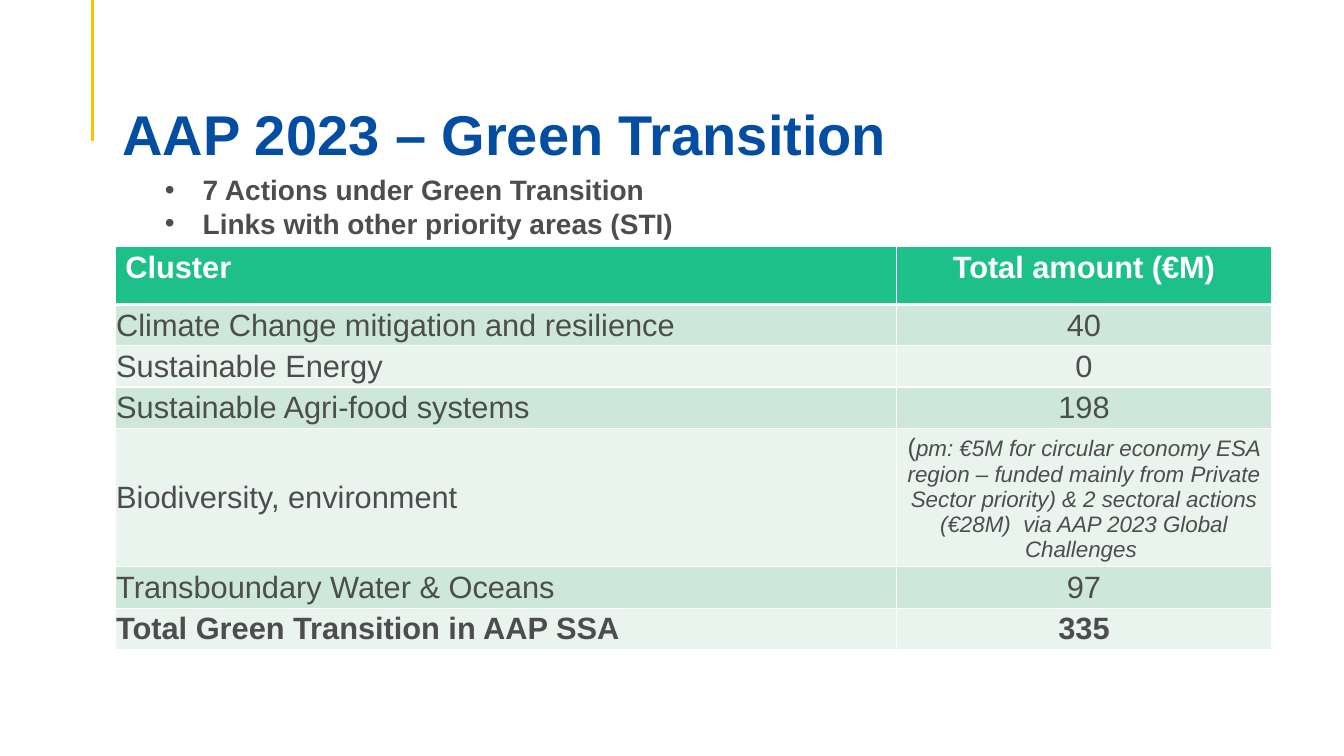
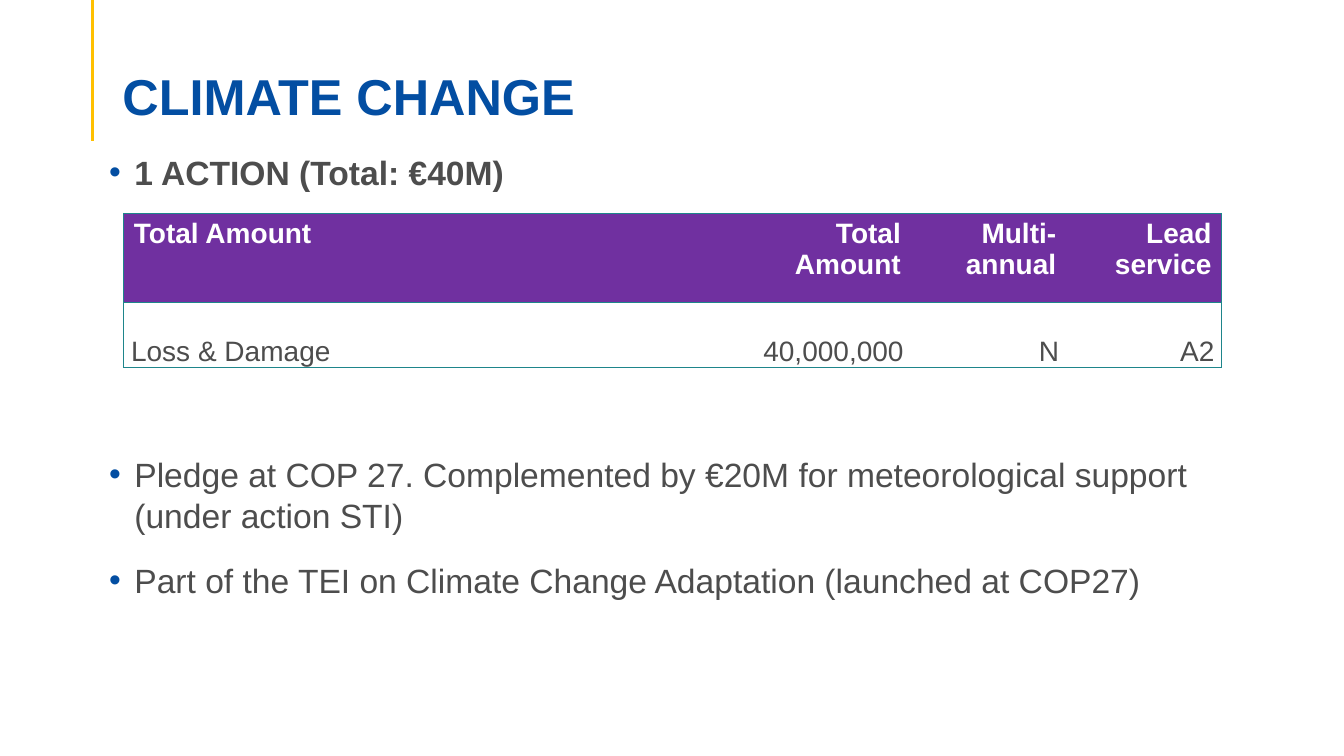
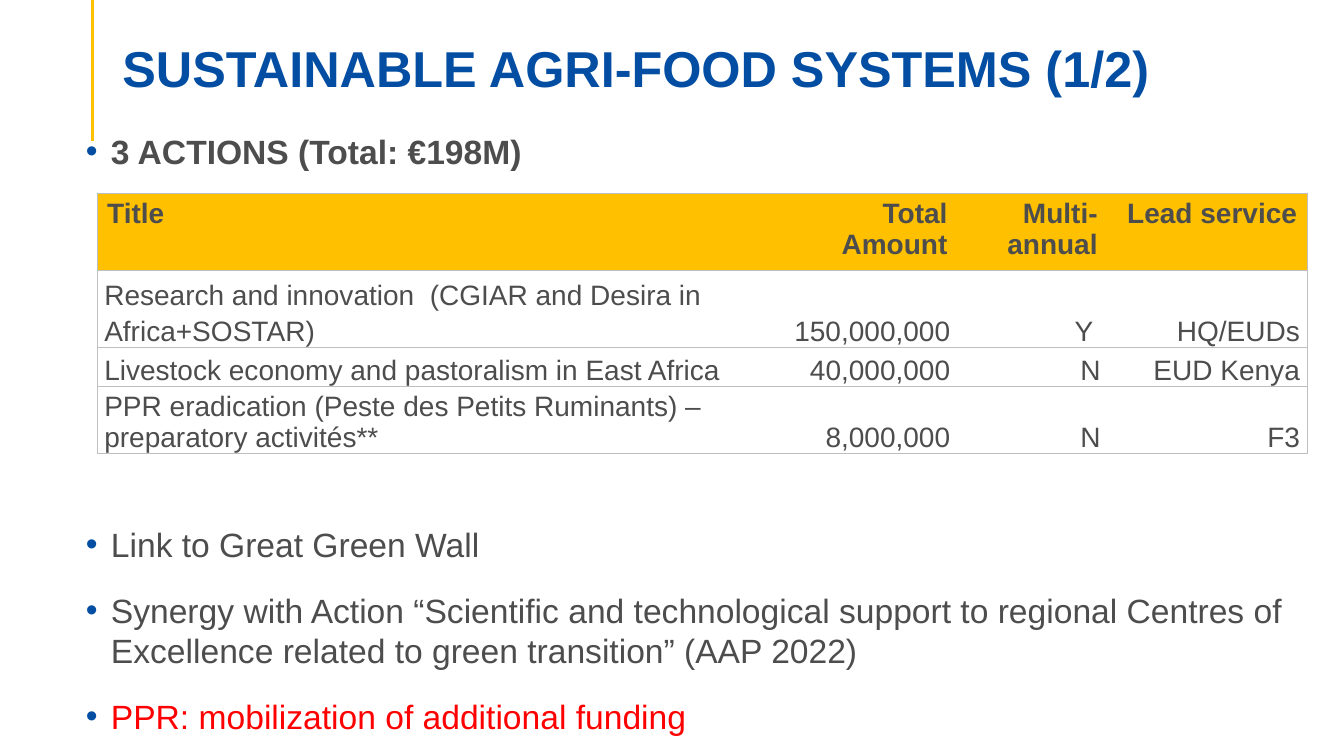
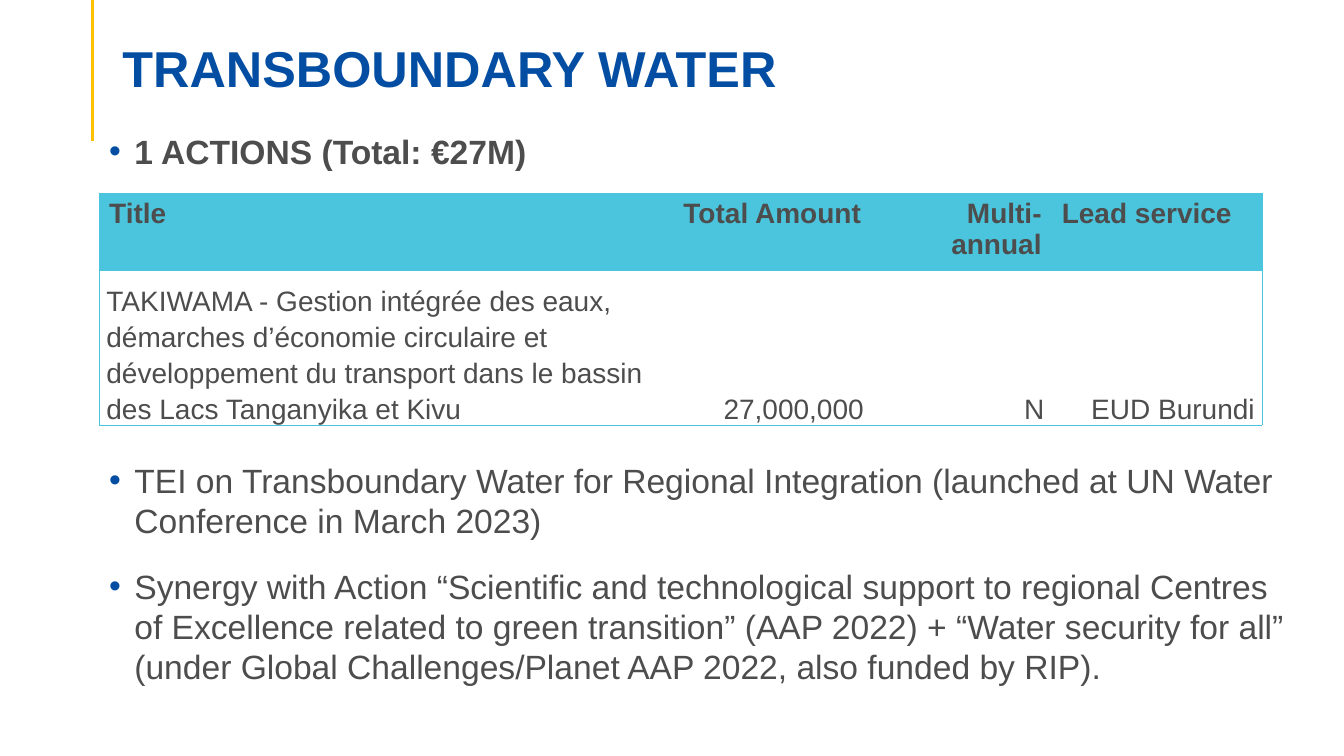
"""Build four slides on the green transition actions."""
from lxml import etree
from pptx import Presentation
from pptx.dml.color import RGBColor
from pptx.enum.shapes import MSO_CONNECTOR
from pptx.enum.text import MSO_ANCHOR, PP_ALIGN
from pptx.oxml.ns import qn
from pptx.util import Pt

BLUE = RGBColor(0x03, 0x4E, 0xA2)
TEXT = RGBColor(0x4D, 0x4D, 0x4D)
WHITE = RGBColor(0xFF, 0xFF, 0xFF)
AMBER = RGBColor(0xFF, 0xC0, 0x00)
RED = RGBColor(0xFF, 0x00, 0x00)
GREEN = RGBColor(0x1E, 0xC0, 0x8A)
MINT = RGBColor(0xCD, 0xE8, 0xDA)
PALE = RGBColor(0xE8, 0xF4, 0xED)
PURPLE = RGBColor(0x70, 0x30, 0xA0)
TEAL = RGBColor(0x1E, 0x85, 0x8B)
CYAN = RGBColor(0x4B, 0xC5, 0xDE)
GREY = RGBColor(0xBF, 0xBF, 0xBF)

LEFT, CENTER, RIGHT = PP_ALIGN.LEFT, PP_ALIGN.CENTER, PP_ALIGN.RIGHT
TOP, MIDDLE, BOTTOM = MSO_ANCHOR.TOP, MSO_ANCHOR.MIDDLE, MSO_ANCHOR.BOTTOM
STRAIGHT = MSO_CONNECTOR.STRAIGHT
FONT = "Arial"
FIGURES = (LEFT, RIGHT, RIGHT, RIGHT)


def add_bullet(para, color, indent):
    props = para._p.get_or_add_pPr()
    props.set("marL", str(Pt(indent)))
    props.set("indent", str(-Pt(indent)))
    fill = etree.SubElement(etree.SubElement(props, qn("a:buClr")), qn("a:srgbClr"))
    fill.set("val", str(color))
    etree.SubElement(props, qn("a:buFont")).set("typeface", FONT)
    etree.SubElement(props, qn("a:buChar")).set("char", "•")


def write(para, text, size=20, color=TEXT, bold=False, italic=False, align=LEFT,
          spacing=1.0, before=0, after=0, bullet=None, indent=18):
    if bullet is not None:
        add_bullet(para, bullet, indent)
    para.alignment = align
    para.line_spacing = spacing
    para.space_before, para.space_after = Pt(before), Pt(after)
    span = para.add_run()
    span.text = text
    span.font.name, span.font.size = FONT, Pt(size)
    span.font.bold, span.font.italic = bold, italic
    span.font.color.rgb = color


def set_borders(cell, borders):
    props = cell._tc.get_or_add_tcPr()
    for side in "LRTB":
        line = etree.SubElement(props, qn(f"a:ln{side}"))
        color, width = borders.get(side, (None, 0))
        line.set("w", str(Pt(width)))
        if color is None:
            etree.SubElement(line, qn("a:noFill"))
        else:
            fill = etree.SubElement(line, qn("a:solidFill"))
            etree.SubElement(fill, qn("a:srgbClr")).set("val", str(color))


def set_margins(target, left, top, right, bottom):
    target.margin_left, target.margin_top = Pt(left), Pt(top)
    target.margin_right, target.margin_bottom = Pt(right), Pt(bottom)


class Deck:
    """Hold the shared style and the current slide."""

    def __init__(self):
        self.deck = Presentation()
        self.deck.slide_width, self.deck.slide_height = Pt(960), Pt(540)
        self.page = None

    def add_page(self, title, bottom, size=36):
        self.page = self.deck.slides.add_slide(self.deck.slide_layouts[6])
        rule = self.page.shapes.add_connector(STRAIGHT, Pt(66.24), 0, Pt(66.24), Pt(100.8))
        rule.line.color.rgb, rule.line.width = AMBER, Pt(2.25)
        etree.SubElement(rule._element.spPr, qn("a:effectLst"))
        frame = self.add_box(80.4, bottom - 56, 828, 56)
        frame.vertical_anchor = BOTTOM
        frame.margin_bottom = 0
        write(frame.paragraphs[0], title, size=size, color=BLUE, bold=True, spacing=0.9)

    def add_box(self, left, top, width, height):
        box = self.page.shapes.add_textbox(Pt(left), Pt(top), Pt(width), Pt(height))
        box.text_frame.word_wrap = True
        return box.text_frame

    def add_bullets(self, frame, items, **style):
        for index, (text, extra) in enumerate(items):
            para = frame.add_paragraph() if index else frame.paragraphs[0]
            write(para, text, **{"bullet": BLUE, **style, **extra})

    def add_body(self, left, top, width, heading, gap, points):
        """Place a heading bullet, then the points below a gap kept for the table."""
        (first, extra), *rest = points
        items = [(heading, {"bold": True}), (first, {"before": gap, **extra}), *rest]
        frame = self.add_box(left, top, width, 530 - top)
        self.add_bullets(frame, items, size=24, after=18)

    def add_table(self, left, top, height, columns, heights, rows, format_cell):
        shape = self.page.shapes.add_table(len(rows), len(columns), Pt(left), Pt(top),
                                           Pt(sum(columns)), Pt(height))
        table = shape.table
        table.first_row = table.horz_banding = False
        for column, width in zip(table.columns, columns):
            column.width = Pt(width)
        for row, row_height in zip(table.rows, heights):
            row.height = Pt(row_height)
        shape.height = Pt(height)
        for r, row in enumerate(rows):
            for c, spans in enumerate(row):
                look = format_cell(r, c)
                cell = table.cell(r, c)
                set_borders(cell, look["borders"])
                if look["fill"] is None:
                    cell.fill.background()
                else:
                    cell.fill.solid()
                    cell.fill.fore_color.rgb = look["fill"]
                cell.vertical_anchor = look["anchor"]
                set_margins(cell, *look["margins"])
                para = cell.text_frame.paragraphs[0]
                for text, extra in ([(spans, {})] if isinstance(spans, str) else spans):
                    write(para, text, **{**look["text"], **extra})

    def add_action_table(self, left, top, height, columns, heights, rows, fill, line,
                         ink=TEXT, header_aligns=FIGURES, tight_rows=()):
        """Place a table of actions with a coloured header and a thin outline."""
        def format_cell(r, c):
            header = r == 0
            borders = {"T": (line, 0.5), "B": (line, 0.5)}
            if c == 0:
                borders["L"] = (line, 0.5)
            if c == len(columns) - 1:
                borders["R"] = (line, 0.5)
            return {
                "borders": borders,
                "fill": fill if header else None,
                "anchor": TOP if header else BOTTOM,
                "margins": (7.2, 3.6, 7.2, 3.6) if header else (5.2, 0, 5.2, 0),
                "text": {"bold": header, "color": ink if header else TEXT,
                         "align": (header_aligns if header else FIGURES)[c],
                         "spacing": 1.0 if header or r in tight_rows else 1.15},
            }
        self.add_table(left, top, height, columns, heights, rows, format_cell)

    def add_cluster_table(self, left, top, height, columns, heights, rows):
        """Place the banded table of clusters with a bold total row."""
        def format_cell(r, c):
            header = r == 0
            borders = {side: (WHITE, 1) for side in "LRTB"}
            if header:
                borders["B"] = (WHITE, 3)
            if r == 1:
                borders["T"] = (WHITE, 3)
            return {
                "borders": borders,
                "fill": GREEN if header else (PALE, MINT)[r % 2],
                "anchor": TOP if header else MIDDLE,
                "margins": (7.2, 3.6, 7.2, 3.6) if header else (0.6, 0.6, 0.6, 0),
                "text": {"size": 22, "bold": r in (0, len(rows) - 1),
                         "color": WHITE if header else TEXT,
                         "align": (LEFT, CENTER)[c]},
            }
        self.add_table(left, top, height, columns, heights, rows, format_cell)


def main():
    deck = Deck()

    deck.add_page("AAP 2023 – Green Transition", 119.8, size=40)
    note = [
        ("(", {"size": 18}),
        ("pm: €5M for circular economy ESA region – funded mainly from Private Sector "
         "priority) & 2 sectoral actions (€28M)  via AAP 2023 Global Challenges ",
         {"size": 16, "italic": True}),
    ]
    heights = (41.8, 29.5, 29.5, 29.5, 72, 29.5, 29.5)
    deck.add_cluster_table(82.4, 175.7, 288, (558, 267.8), heights, [
        ("Cluster", "Total amount (€M)"),
        ("Climate Change mitigation and resilience", "40"),
        ("Sustainable Energy", "0"),
        ("Sustainable Agri-food systems", "198"),
        ("Biodiversity, environment", note),
        ("Transboundary Water & Oceans", "97"),
        ("Total Green Transition in AAP SSA", "335"),
    ])
    frame = deck.add_box(110.7, 120, 765, 80)
    deck.add_bullets(frame, [("7 Actions under Green Transition", {}),
                             ("Links with other priority areas (STI)", {})],
                     bold=True, bullet=TEXT, indent=27)

    deck.add_page("CLIMATE CHANGE", 90)
    deck.add_body(70.9, 105.1, 802, "1 ACTION (Total: €40M)", 169, [
        ("Pledge at COP 27. Complemented by €20M for meteorological support "
         "(under action STI)", {}),
        ("Part of the TEI on Climate Change Adaptation (launched at COP27)", {}),
    ])
    deck.add_action_table(88.4, 152.2, 110.5, (432, 130.3, 111, 111), (64, 46.5), [
        ("Total Amount", "Total Amount", "Multi-annual", "Lead service"),
        ("Loss & Damage", "40,000,000", "N", "A2"),
    ], PURPLE, TEAL, ink=WHITE)

    deck.add_page("SUSTAINABLE AGRI-FOOD SYSTEMS (1/2)", 70.56)
    deck.add_body(54.2, 90, 880, "3 ACTIONS (Total: €198M)", 234, [
        ("Link to Great Green Wall", {}),
        ("Synergy with Action “Scientific and technological support to regional Centres of "
         "Excellence related to green transition” (AAP 2022)", {}),
        ("PPR: mobilization of additional funding", {"color": RED}),
    ])
    columns, heights = (474.5, 140.2, 107.3, 142.5), (20.9, 9.4, 20.2, 9.4)
    deck.add_action_table(69.3, 137.8, 181.5, columns, heights, [
        ("Title", "Total Amount", "Multi-annual", "Lead service"),
        ("Research and innovation  (CGIAR and Desira in Africa+SOSTAR)",
         "150,000,000", "Y ", "HQ/EUDs"),
        ("Livestock economy and pastoralism in East Africa", "40,000,000", "N", "EUD Kenya"),
        ("PPR eradication (Peste des Petits Ruminants) – preparatory activités**",
         "8,000,000", "N", "F3"),
    ], AMBER, GREY, tight_rows=(3,))

    deck.add_page("TRANSBOUNDARY WATER", 70.56)
    deck.add_body(70.9, 90, 855.4, "1 ACTIONS (Total: €27M)", 188, [
        ("TEI on Transboundary Water for Regional Integration (launched at UN Water "
         "Conference in March 2023)", {}),
        ("Synergy with Action “Scientific and technological support to regional Centres of "
         "Excellence related to green transition” (AAP 2022) + “Water security for all” "
         "(under Global Challenges/Planet AAP 2022, also funded by RIP).", {}),
    ])
    deck.add_action_table(70.8, 137.8, 163.4, (406, 145.5, 129, 150.3), (38.9, 95), [
        ("Title", "Total Amount", "Multi-annual", "Lead service"),
        ("TAKIWAMA - Gestion intégrée des eaux, démarches d’économie circulaire et "
         "développement du transport dans le bassin des Lacs Tanganyika et Kivu",
         "27,000,000", "N", "EUD Burundi"),
    ], CYAN, CYAN, header_aligns=(LEFT, RIGHT, RIGHT, LEFT))

    deck.deck.save("out.pptx")


if __name__ == "__main__":
    main()
